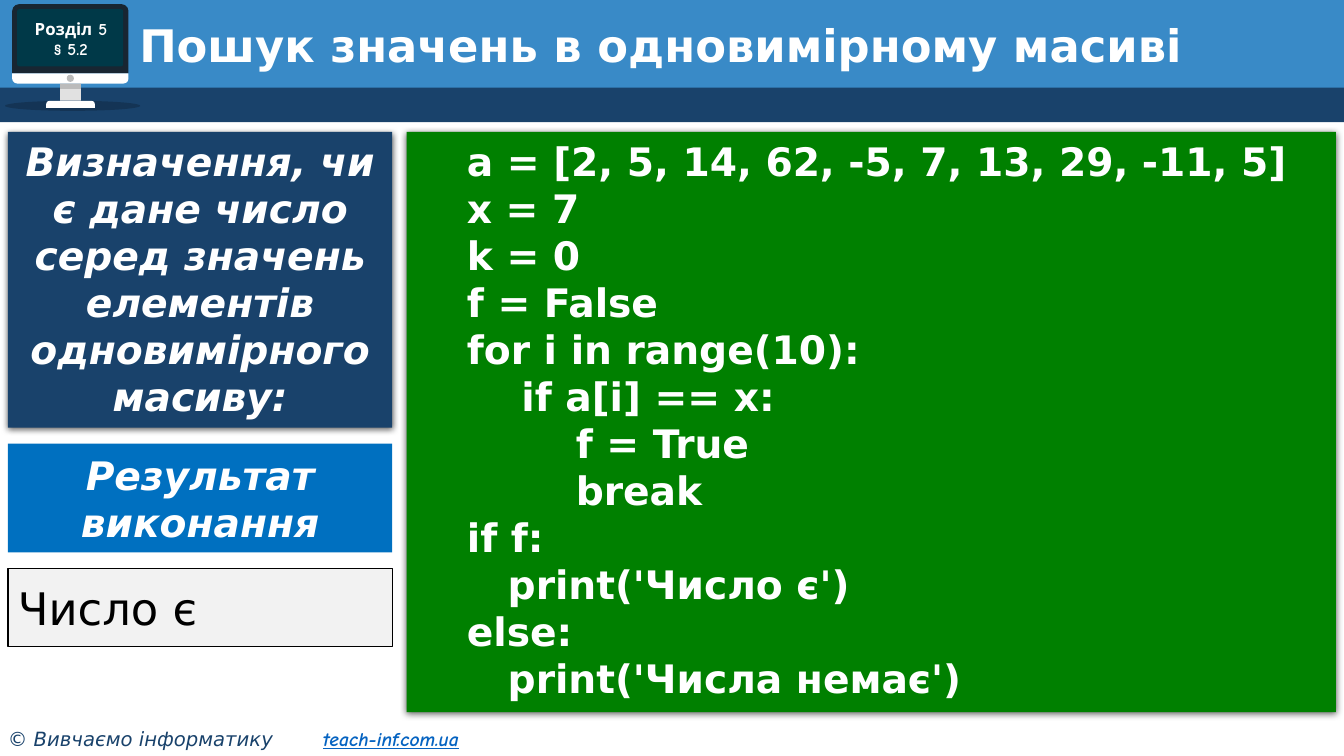
"""Build the slide about searching for values in a one-dimensional array."""
from dataclasses import dataclass

from lxml import etree
from pptx import Presentation
from pptx.dml.color import RGBColor
from pptx.enum.shapes import MSO_SHAPE
from pptx.enum.text import MSO_ANCHOR, PP_ALIGN
from pptx.oxml.ns import qn
from pptx.util import Emu, Pt

RECT = MSO_SHAPE.RECTANGLE
OVAL = MSO_SHAPE.OVAL
ROUNDED = MSO_SHAPE.ROUNDED_RECTANGLE
ROUND_SIDE = MSO_SHAPE.ROUND_2_SAME_RECTANGLE
TOP, MIDDLE = MSO_ANCHOR.TOP, MSO_ANCHOR.MIDDLE
LEFT, CENTER, JUSTIFY = PP_ALIGN.LEFT, PP_ALIGN.CENTER, PP_ALIGN.JUSTIFY

SLIDE_W, SLIDE_H = Emu(12192000), Emu(6858000)
COLUMNS, ROWS = 160, 90
COLUMN, ROW = SLIDE_W / COLUMNS, SLIDE_H / ROWS

MAIN_FONT, HAND_FONT = "DejaVu Sans", "Comic Neue"
WHITE, BLACK, NAVY, BLUE = "FFFFFF", "000000", "19426B", "398AC7"
SIDE_LEFT, SIDE_WIDTH, PANEL_TOP = 0.95, 45.75, 15.7

CODE = """a = [2, 5, 14, 62, -5, 7, 13, 29, -11, 5]
x = 7
k = 0
f = False
for i in range(10):
    if a[i] == x:
        f = True
        break
if f:
   print('Число є')
else:
   print('Числа немає')"""


@dataclass(frozen=True)
class Area:
    left: float
    top: float
    width: float
    height: float

    def emu(self) -> tuple[Emu, Emu, Emu, Emu]:
        return (Emu(round(self.left * COLUMN)), Emu(round(self.top * ROW)),
                Emu(round(self.width * COLUMN)), Emu(round(self.height * ROW)))


@dataclass(frozen=True)
class Block:
    area: Area
    fill: str
    kind: int = RECT
    corners: tuple[float, ...] = ()
    opacity: int = 100
    border: str = ""
    shadow: bool = False


@dataclass(frozen=True)
class Label:
    text: str
    size: int
    font: str = MAIN_FONT
    color: str = WHITE
    bold: bool = True
    italic: bool = False
    align: int = LEFT
    anchor: int = MIDDLE
    indent: float = 0
    spacing: float = 1


DECORATION = (
    Block(Area(0, 0, COLUMNS, 10.9), BLUE),
    Block(Area(0, 10.45, COLUMNS, 4.1), NAVY),
    Block(Area(0.6, 12, 16.1, 1.2), BLACK, OVAL, opacity=20),
    Block(Area(1.45, 0.5, 13.85, 8.25), "182632", ROUND_SIDE, (0.1, 0)),
    Block(Area(1.45, 8.75, 13.85, 1.2), WHITE, ROUND_SIDE, (0, 0.5)),
    Block(Area(7.15, 9.95, 2.5, 2.05), "E1E1E1"),
    Block(Area(7.15, 9.95, 2.5, 0.65), "BBBBBB"),
    Block(Area(5.5, 12, 5.8, 0.85), WHITE, ROUND_SIDE, (0.5, 0)),
    Block(Area(7.95, 8.9, 0.85, 0.85), "BBBBBB", OVAL),
    Block(Area(2.05, 1.1, 12.6, 6.8), "003948", ROUNDED, (0.036,)),
)

CAPTIONS = (
    (Area(1.55, 1.1, 13.8, 7.1), Label("Розділ 5\n§ 5.2", 12, HAND_FONT, align=CENTER)),
    (Area(15.4, 2.2, 140.6, 6.95),
     Label("Пошук значень в одновимірному масиві", 32, spacing=0.9)),
)

PANELS = (
    (Block(Area(SIDE_LEFT, PANEL_TOP, SIDE_WIDTH, 35.2), NAVY, shadow=True),
     Label("Визначення, чи є дане число серед значень елементів одновимірного масиву:",
           28, italic=True, align=CENTER, anchor=TOP)),
    (Block(Area(48.4, PANEL_TOP, 110.65, 69.1), "008000", shadow=True),
     Label(CODE, 28, align=JUSTIFY, anchor=TOP, indent=6)),
    (Block(Area(SIDE_LEFT, 52.8, SIDE_WIDTH, 12.95), "0070C0"),
     Label("Результат виконання", 28, italic=True, align=CENTER)),
    (Block(Area(SIDE_LEFT, 67.7, SIDE_WIDTH, 9.3), "F2F2F2", border=BLACK),
     Label("Число є", 32, color=BLACK, bold=False)),
)


def rgb(value: str) -> RGBColor:
    return RGBColor.from_string(value)


def write(paragraph, text: str, *, size: int, font: str, color: str,
          bold: bool = False, italic: bool = False, underline: bool = False) -> None:
    run = paragraph.add_run()
    run.text = text
    run.font.size, run.font.name = Pt(size), font
    run.font.bold, run.font.italic, run.font.underline = bold, italic, underline
    run.font.color.rgb = rgb(color)


def fill_frame(frame, label: Label) -> None:
    frame.word_wrap = True
    frame.vertical_anchor = label.anchor
    for number, line in enumerate(label.text.split("\n")):
        paragraph = frame.add_paragraph() if number else frame.paragraphs[0]
        paragraph.alignment = label.align
        if label.spacing != 1:
            paragraph.line_spacing = label.spacing
        if label.indent:
            properties = paragraph._p.get_or_add_pPr()
            properties.set("marL", "0")
            properties.set("indent", str(round(label.indent * COLUMN)))
        write(paragraph, line, size=label.size, font=label.font, color=label.color,
              bold=label.bold, italic=label.italic)


def add_alpha(color_element, percent: int) -> None:
    etree.SubElement(color_element, qn("a:alpha")).set("val", str(percent * 1000))


def cast_shadow(shape) -> None:
    effects = shape._element.spPr.find(qn("a:effectLst"))
    outer = etree.SubElement(effects, qn("a:outerShdw"), blurRad=str(Pt(4.5)),
                             dist=str(Pt(1.5)), dir="5400000", rotWithShape="0")
    add_alpha(etree.SubElement(outer, qn("a:srgbClr"), val=BLACK), 63)


def draw_block(slide, block: Block):
    shape = slide.shapes.add_shape(block.kind, *block.area.emu())
    shape.shadow.inherit = False
    for index, corner in enumerate(block.corners):
        shape.adjustments[index] = corner
    shape.fill.solid()
    shape.fill.fore_color.rgb = rgb(block.fill)
    if block.opacity < 100:
        add_alpha(shape._element.spPr.find(".//" + qn("a:srgbClr")), block.opacity)
    if block.border:
        shape.line.color.rgb = rgb(block.border)
        shape.line.width = Pt(1)
    else:
        shape.line.fill.background()
    if block.shadow:
        cast_shadow(shape)
    return shape


def add_frame(slide, area: Area):
    return slide.shapes.add_textbox(*area.emu()).text_frame


def draw_footer(slide) -> None:
    frame = add_frame(slide, Area(-0.25, 85.9, 62.8, 4.1))
    frame.word_wrap = True
    credit = frame.paragraphs[0]
    tabs = etree.SubElement(credit._p.get_or_add_pPr(), qn("a:tabLst"))
    etree.SubElement(tabs, qn("a:tab"), pos=str(round(37.5 * COLUMN)), algn="l")
    write(credit, "© Вивчаємо інформатику\t", size=14, font=MAIN_FONT, color=NAVY, italic=True)
    write(credit, "teach-inf.com.ua", size=14, font=HAND_FONT, color="0563C1",
          bold=True, italic=True, underline=True)


def main() -> None:
    deck = Presentation()
    deck.slide_width, deck.slide_height = SLIDE_W, SLIDE_H
    slide = deck.slides.add_slide(deck.slide_layouts[6])
    for block in DECORATION:
        draw_block(slide, block)
    draw_footer(slide)
    for area, label in CAPTIONS:
        fill_frame(add_frame(slide, area), label)
    for block, label in PANELS:
        fill_frame(draw_block(slide, block).text_frame, label)
    deck.save("out.pptx")


if __name__ == "__main__":
    main()
